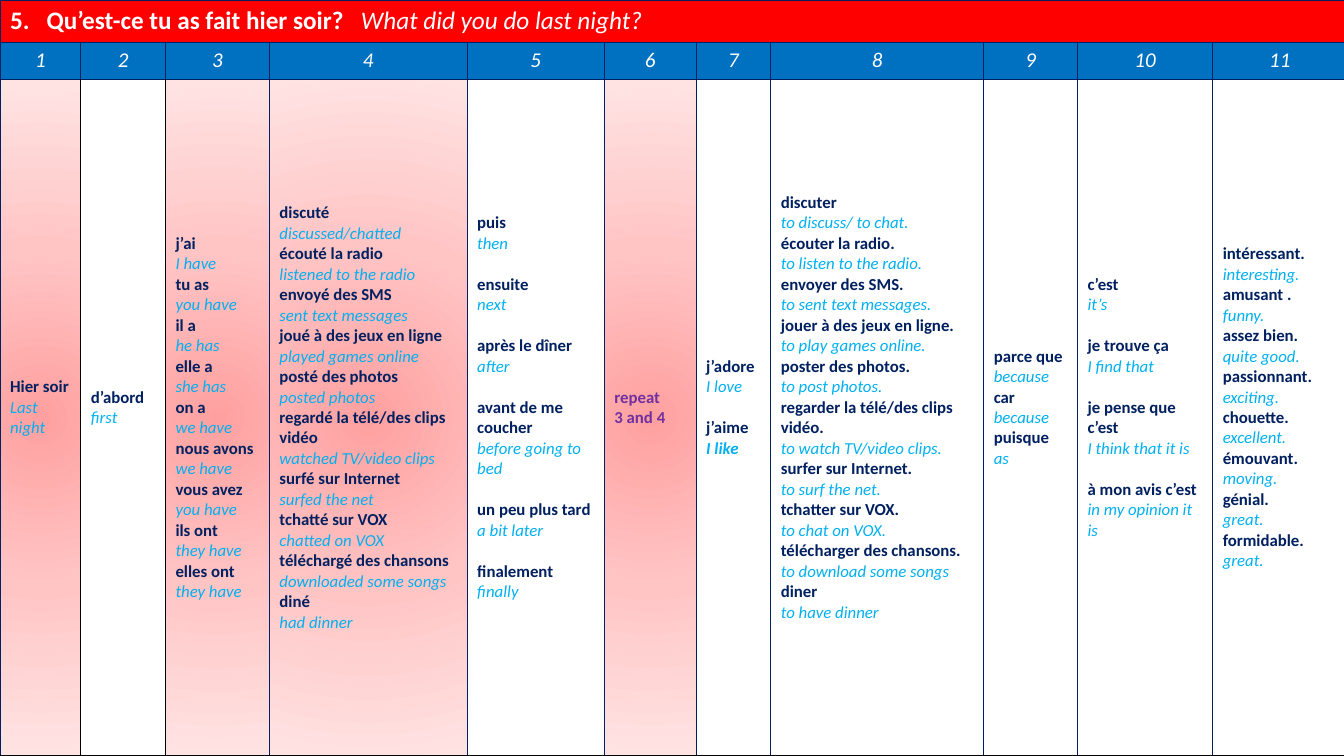
from lxml import etree
from pptx import Presentation
from pptx import util as u
from pptx.dml.color import RGBColor
from pptx.enum import text
from pptx.oxml import ns

WHITE = RGBColor(0xFF, 0xFF, 0xFF)
RED = RGBColor(0xFF, 0x00, 0x00)
BLUE = RGBColor(0x00, 0x70, 0xC0)
NAVY = RGBColor(0x00, 0x20, 0x60)
SKY = RGBColor(0x00, 0xB0, 0xF0)
PURPLE = RGBColor(0x70, 0x30, 0xA0)
BLACK = RGBColor(0x00, 0x00, 0x00)
PINK_STOPS = [(0, RGBColor(0xFF, 0xA0, 0xA0)), (50, RGBColor(0xFF, 0xC5, 0xC5)),
              (100, RGBColor(0xFF, 0xE3, 0xE3))]

FONT = "Calibri"
LINE = 14.65  # height of one 12 pt line, in points
COL_WIDTHS = [0.8, 0.84, 1.03, 1.96, 1.36, 0.91, 0.74, 2.11, 0.93, 1.34, 1.33]
ROW_HEIGHTS = [0.42, 0.37, 6.71]
PINK_COLUMNS = {1, 3, 4, 6}
TRUE_CENTRE_COLUMNS = {3, 4}  # the others sit half a line higher
BOLD_ENGLISH = {"I like"}

# One entry per column: "French|English" lines, a blank line makes a gap.
PHRASES = [
    "Hier soir|Last night",
    "d’abord|first",
    """j’ai|I have
tu as|you have
il a|he has
elle a|she has
on a|we have
nous avons|we have
vous avez|you have
ils ont|they have
elles ont|they have""",
    """discuté|discussed/chatted
écouté la radio|listened to the radio
envoyé des SMS|sent text messages
joué à des jeux en ligne|played games online
posté des photos|posted photos
regardé la télé/des clips vidéo|watched TV/video clips
surfé sur Internet|surfed the net
tchatté sur VOX|chatted on VOX
téléchargé des chansons|downloaded some songs
diné|had dinner""",
    """puis|then

ensuite|next

après le dîner|after

avant de me coucher|before going to bed

un peu plus tard|a bit later

finalement|finally""",
    "repeat\n3 and 4",
    """j’adore|I love

j’aime|I like""",
    """discuter|to discuss/ to chat.
écouter la radio.|to listen to the radio.
envoyer des SMS.|to sent text messages.
jouer à des jeux en ligne.|to play games online.
poster des photos.|to post photos.
regarder la télé/des clips vidéo.|to watch TV/video clips.
surfer sur Internet.|to surf the net.
tchatter sur VOX.|to chat on VOX.
télécharger des chansons.|to download some songs
diner|to have dinner""",
    """parce que|because
car|because
puisque|as""",
    """c’est|it’s

je trouve ça|I find that

je pense que c’est|I think that it is

à mon avis c’est|in my opinion it is""",
    """intéressant.|interesting.
amusant .|funny.
assez bien.|quite good.
passionnant.|exciting.
chouette.|excellent.
émouvant.|moving.
génial.|great.
formidable.|great.""",
]


def set_font(font, size, color, bold=False, italic=False):
    font.name, font.size = FONT, u.Pt(size)
    font.bold, font.italic = bold, italic
    font.color.rgb = color


def add_color(parent, color):
    etree.SubElement(parent, ns.qn("a:srgbClr"), val=str(color))


def set_borders(cell, left=NAVY, right=NAVY, top=NAVY, bottom=NAVY):
    """Draw 1 pt borders; they must come before the fill in the cell properties."""
    tc_pr = cell._tc.get_or_add_tcPr()
    for i, (side, color) in enumerate(zip("LRTB", (left, right, top, bottom))):
        ln = etree.Element(ns.qn(f"a:ln{side}"), w=str(u.Pt(1)))
        add_color(etree.SubElement(ln, ns.qn("a:solidFill")), color)
        tc_pr.insert(i, ln)


def fill_solid(cell, color):
    cell.fill.solid()
    cell.fill.fore_color.rgb = color


def fill_pink(cell):
    """Fill with a circular gradient that radiates from the middle."""
    grad = etree.SubElement(cell._tc.get_or_add_tcPr(), ns.qn("a:gradFill"), rotWithShape="1")
    stops = etree.SubElement(grad, ns.qn("a:gsLst"))
    for percent, color in PINK_STOPS:
        add_color(etree.SubElement(stops, ns.qn("a:gs"), pos=str(percent * 1000)), color)
    circle = etree.SubElement(grad, ns.qn("a:path"), path="circle")
    etree.SubElement(circle, ns.qn("a:fillToRect"), l="50000", t="50000", r="50000", b="50000")


def write_title(cell):
    p = cell.text_frame.paragraphs[0]
    for words, is_french in (("5.   Qu’est-ce tu as fait hier soir?   ", True),
                             ("What did you do last night?", False)):
        r = p.add_run()
        r.text = words
        set_font(r.font, 18, WHITE, bold=is_french, italic=not is_french)
    fill_solid(cell, RED)
    set_borders(cell)


def write_number(cell, number):
    p = cell.text_frame.paragraphs[0]
    p.text = str(number)
    p.alignment = text.PP_ALIGN.CENTER
    set_font(p.font, 15, WHITE, italic=True)
    fill_solid(cell, BLUE)
    set_borders(cell)


def write_phrases(cell, number, phrases):
    tf = cell.text_frame
    p = tf.paragraphs[0]
    is_first = True
    for group in phrases.split("\n\n"):
        starts_group = not is_first
        for line in group.split("\n"):
            french, bar, english = line.partition("|")
            for words, is_french in ((french, True), (english, False)):
                if not words:
                    continue
                if not is_first:
                    p = tf.add_paragraph()
                p.text = words
                p.space_before = u.Pt(LINE if starts_group else 0)
                color = (NAVY if bar else PURPLE) if is_french else SKY
                set_font(p.font, 12, color, is_french or words in BOLD_ENGLISH, not is_french)
                is_first = starts_group = False
    cell.vertical_anchor = text.MSO_ANCHOR.MIDDLE
    if number not in TRUE_CENTRE_COLUMNS:
        cell.margin_bottom = u.Inches(0.05) + u.Pt(LINE)
    if number in PINK_COLUMNS:
        fill_pink(cell)
    else:
        fill_solid(cell, WHITE)
    set_borders(cell, left=BLACK if number in (2, 3) else NAVY,
                right=BLACK if number in (1, 2) else NAVY, bottom=BLACK)


def add_phrase_table(s, left, top, width, height):
    rows, cols = len(ROW_HEIGHTS), len(COL_WIDTHS)
    table = s.shapes.add_table(rows, cols, left, top, width, height).table
    table.first_row = table.horz_banding = False
    for column, share in zip(table.columns, COL_WIDTHS):
        column.width = int(width * share / sum(COL_WIDTHS))
    for row, share in zip(table.rows, ROW_HEIGHTS):
        row.height = int(height * share / sum(ROW_HEIGHTS))
    table.cell(0, 0).merge(table.cell(0, cols - 1))
    write_title(table.cell(0, 0))
    for i, phrases in enumerate(PHRASES):
        write_number(table.cell(1, i), i + 1)
        write_phrases(table.cell(2, i), i + 1, phrases)


def main():
    prs = Presentation()
    prs.slide_width, prs.slide_height = u.Inches(13.33), u.Inches(7.5)
    s = prs.slides.add_slide(prs.slide_layouts[6])
    add_phrase_table(s, 0, 0, u.Inches(13.36), prs.slide_height)
    prs.save("out.pptx")


if __name__ == "__main__":
    main()
